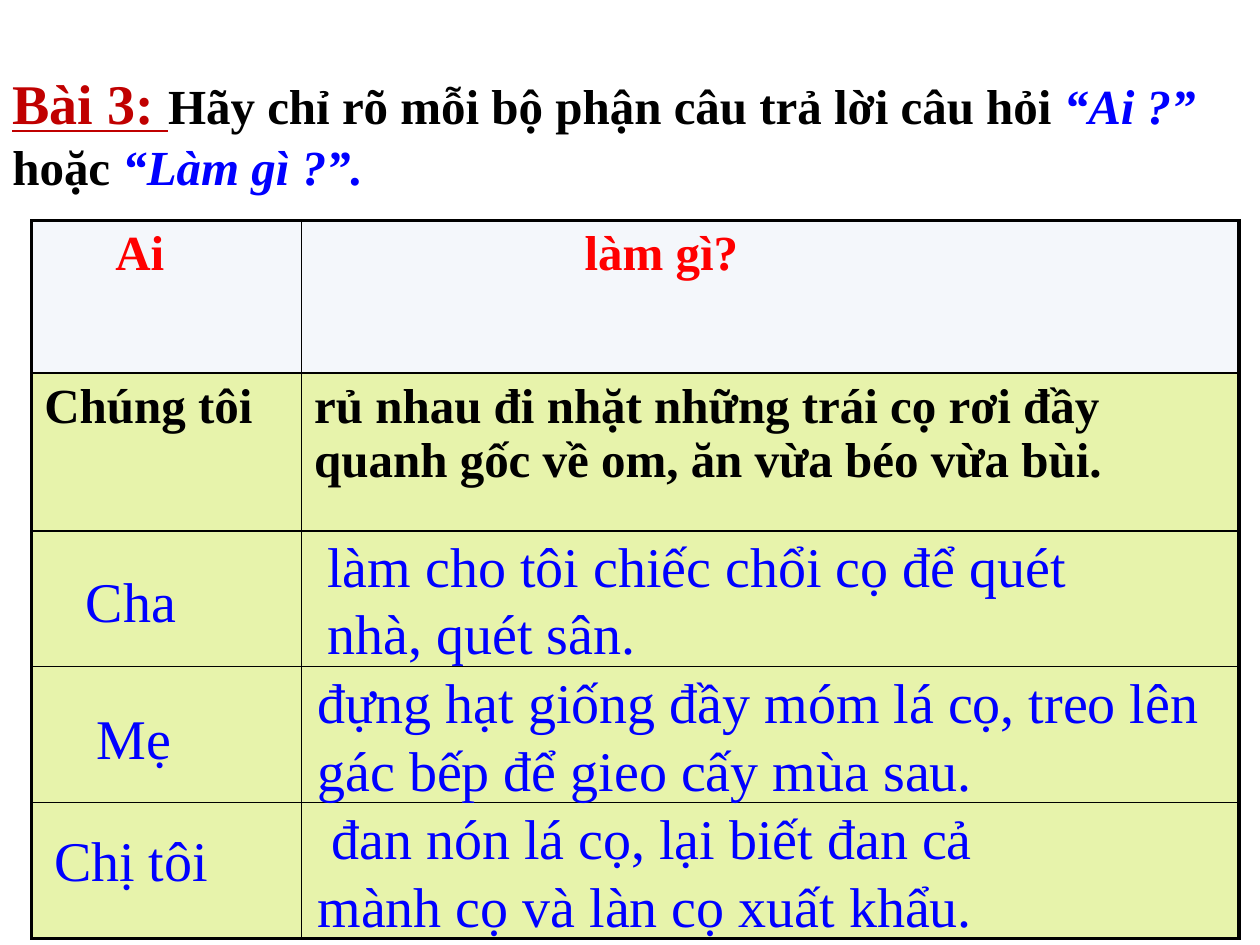
from pptx import Presentation
from pptx.dml.color import RGBColor as Rgb
from pptx.enum.shapes import MSO_SHAPE as Kind
from pptx.enum.text import MSO_ANCHOR as Anchor, PP_ALIGN as Align
from pptx.oxml import parse_xml as to_xml
from pptx.oxml.ns import nsdecls as ns
from pptx.util import Cm, Pt

FONT = "Times New Roman"
BLACK = Rgb(0, 0, 0)
RED = Rgb(0xFF, 0, 0)
DARK = Rgb(0xC0, 0, 0)
BLUE = Rgb(0, 0, 0xFF)
LIME = Rgb(0xE7, 0xF3, 0xAB)
PALE = Rgb(0xF4, 0xF7, 0xFB)

COLS = [5.44, 18.9]
ROWS = [3.07, 3.18, 2.74, 2.74, 2.74]
CELLS = {
    (0, 0): ("Ai", RED, 1.43),
    (0, 1): ("làm gì?", RED, 5.45),
    (1, 0): ("Chúng tôi", BLACK, 0),
    (1, 1): ("rủ nhau đi nhặt những trái cọ rơi đầy quanh gốc về om, ăn vừa béo vừa bùi.", BLACK, 0),
}
NAMES = [
    ("Cha", 1.48, 11.3, 3.18),
    ("Chị tôi", 0.84, 16.51, 4.45),
]
DEEDS = [
    ("làm cho tôi chiếc chổi cọ để quét nhà, quét sân.", 6.35, 10.59, 16.31, 0, 0.25),
    ("đựng hạt giống đầy móm lá cọ, treo lên gác bếp để gieo cấy mùa sau.", 6.15, 13.34, 18.62, 0, 0.25),
    ("đan nón lá cọ, lại biết đan cả mành cọ và làn cọ xuất khẩu.", 6.15, 16.08, 17.78, 0.28, 2.3),
]
TITLE = [
    ("Bài 3: ", 32, DARK, False, True),
    ("Hãy chỉ rõ mỗi bộ phận câu trả lời câu hỏi ", 28, BLACK, False, False),
    ("“Ai ?” ", 28, BLUE, True, False),
    ("hoặc ", 28, BLACK, False, False),
    ("“Làm gì ?”.", 28, BLUE, True, False),
]


def add_run(para, text, size, color, bold=False, ital=False, line=False):
    run = para.add_run()
    run.text = text
    font = run.font
    font.name, font.size = FONT, Pt(size)
    font.bold, font.italic, font.underline = bold, ital, line
    font.color.rgb = color


def indent(para, size):
    para._p.get_or_add_pPr().set("indent", str(Cm(size)))


def add_edge(cell, side, width):
    cell._tc.get_or_add_tcPr().append(to_xml(
        f'<a:{side} {ns("a")} w="{Pt(width)}"><a:solidFill>'
        f'<a:srgbClr val="{BLACK}"/></a:solidFill></a:{side}>'))


def add_grid(slide):
    frame = slide.shapes.add_table(
        len(ROWS), len(COLS), Cm(0.64), Cm(4.45), Cm(sum(COLS)), Cm(sum(ROWS)))
    grid = frame.table
    for col, width in zip(grid.columns, COLS):
        col.width = Cm(width)
    for row, height in zip(grid.rows, ROWS):
        row.height = Cm(height)
    for r in range(len(ROWS)):
        for c in range(len(COLS)):
            cell = grid.cell(r, c)
            outer = {"lnL": c == 0, "lnR": c == len(COLS) - 1,
                     "lnT": r == 0, "lnB": r == len(ROWS) - 1}
            for side, thick in outer.items():
                add_edge(cell, side, 2.25 if thick else 1)
            cell.fill.solid()
            cell.fill.fore_color.rgb = LIME if r else PALE
            if (r, c) in CELLS:
                text, color, start = CELLS[r, c]
                para = cell.text_frame.paragraphs[0]
                indent(para, start)
                add_run(para, text, 28, color, bold=True)


def add_box(slide, left, top, width, height):
    box = slide.shapes.add_textbox(Cm(left), Cm(top), Cm(width), Cm(height))
    box.text_frame.word_wrap = True
    return box.text_frame


def add_note(slide, text, left, top, width, height, start=0, right=0.25):
    frame = add_box(slide, left, top, width, height)
    frame.margin_right = Cm(right)
    para = frame.paragraphs[0]
    indent(para, start)
    add_run(para, text, 32, BLUE)


def add_label(slide, text, left, top, width, height):
    box = slide.shapes.add_shape(
        Kind.RECTANGLE, Cm(left), Cm(top), Cm(width), Cm(height))
    box.shadow.inherit = False
    box.fill.solid()
    box.fill.fore_color.rgb = LIME
    box.line.fill.background()
    frame = box.text_frame
    frame.vertical_anchor = Anchor.TOP
    para = frame.paragraphs[0]
    para.alignment = Align.LEFT
    add_run(para, text, 32, BLUE)


def add_title(slide):
    frame = add_box(slide, 0, 1.07, 25.6, 3.18)
    frame.vertical_anchor = Anchor.MIDDLE
    for text, size, color, ital, line in TITLE:
        add_run(frame.paragraphs[0], text, size, color, True, ital, line)


def main():
    deck = Presentation()
    deck.slide_width, deck.slide_height = Cm(25.4), Cm(19.05)
    slide = deck.slides.add_slide(deck.slide_layouts[6])
    add_grid(slide)
    for text, left, top, width, start, right in DEEDS:
        add_note(slide, text, left, top, width, 2.97, start, right)
    for text, left, top, width in NAMES:
        add_note(slide, text, left, top, width, 1.6)
    add_label(slide, "Mẹ", 1.7, 14.05, 3.18, 1.6)
    add_title(slide)
    deck.save("out.pptx")


if __name__ == "__main__":
    main()
